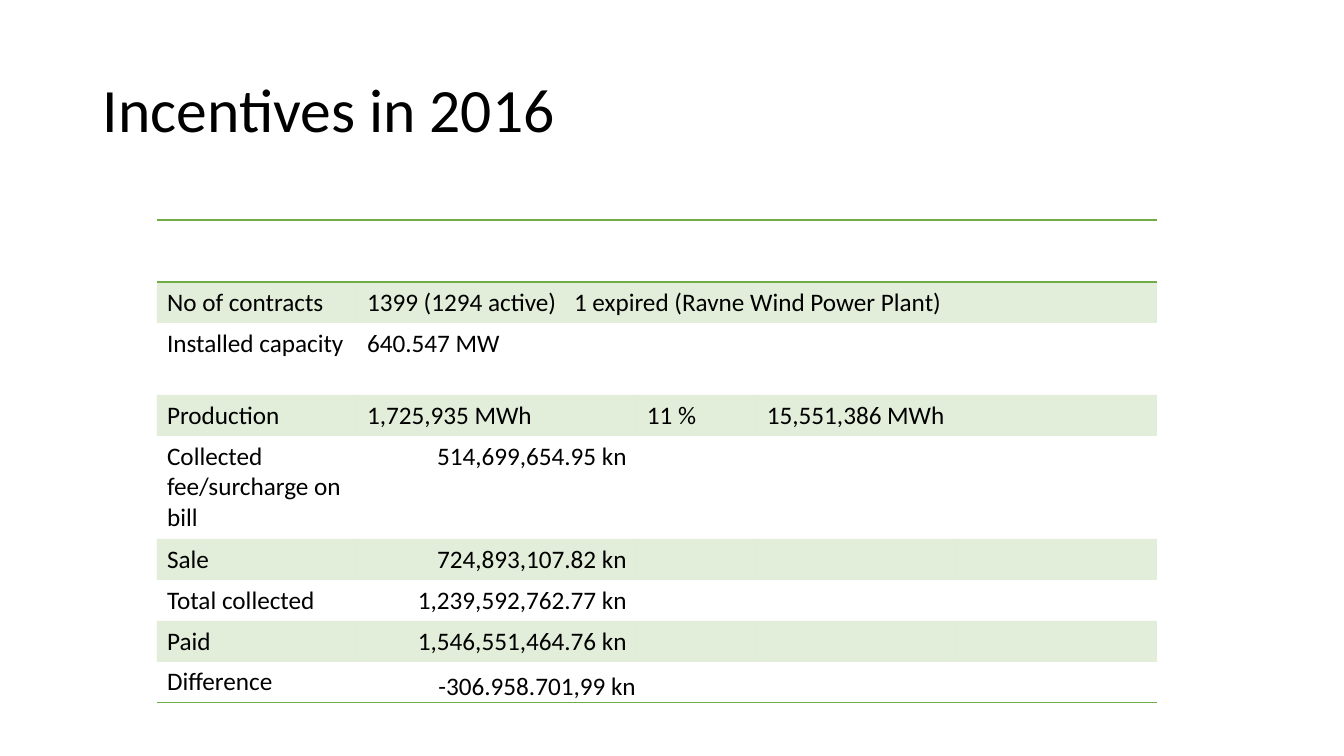
"""Build the slide of 2016 incentive figures as a title and a banded table."""
from lxml.etree import SubElement
from pptx import Presentation
from pptx.dml.color import RGBColor
from pptx.enum.text import MSO_ANCHOR, PP_ALIGN
from pptx.oxml.ns import qn
from pptx.util import Pt

PX = 914400 / 100.8
GREEN = "70AD47"
BLACK = "000000"


def px(length):
    return round(length * PX)


def write(paragraph, text, size):
    run = paragraph.add_run()
    run.text = text
    run.font.name = "Calibri"
    run.font.size = Pt(size)
    run.font.color.rgb = RGBColor.from_string(BLACK)


prs = Presentation()
prs.slide_width, prs.slide_height = px(1344), px(756)
slide = prs.slides.add_slide(prs.slide_layouts[6])

title = slide.shapes.add_textbox(px(93), px(40), px(1159), px(146)).text_frame
title.word_wrap = True
title.vertical_anchor = MSO_ANCHOR.MIDDLE
title.paragraphs[0].line_spacing = 0.9
write(title.paragraphs[0], "Incentives in 2016", 44)

column_widths = [200, 200, 80, 120, 200, 200]
row_heights = [62, 41, 72, 41, 103, 41, 41, 41, 40]
figures = [
    {},
    {0: "No of contracts", 1: "1399 (1294 active)\t1 expired (Ravne Wind Power Plant)"},
    {0: "Installed capacity", 1: "640.547 MW"},
    {0: "Production", 1: "1,725,935 MWh", 3: "11 %", 4: "15,551,386 MWh"},
    {0: "Collected fee/surcharge on bill", 1: "514,699,654.95 kn"},
    {0: "Sale", 1: "724,893,107.82 kn"},
    {0: "Total collected", 1: "1,239,592,762.77 kn"},
    {0: "Paid", 1: "1,546,551,464.76 kn"},
    {0: "Difference", 1: "-306.958.701,99 kn"},
]
last_row = len(figures) - 1
first_money_row = 4
ruled_sides = {0: ["a:lnT", "a:lnB"], last_row: ["a:lnB"]}

incentives = slide.shapes.add_table(
    len(row_heights), len(column_widths),
    px(157), px(220), px(sum(column_widths)), px(sum(row_heights))).table
incentives.first_row = False
incentives.horz_banding = False
style_id = incentives._tbl.tblPr.find(qn("a:tableStyleId"))
style_id.text = "{2D5ABB26-0587-4C30-8999-92F81FD0307C}"
for column, width in zip(incentives.columns, column_widths):
    column.width = px(width)
for row, height in zip(incentives.rows, row_heights):
    row.height = px(height)

for r, row_figures in enumerate(figures):
    for c in range(len(column_widths)):
        cell = incentives.cell(r, c)
        for side in ruled_sides.get(r, []):
            rule = SubElement(cell._tc.get_or_add_tcPr(), qn(side), w=str(Pt(1)))
            rule_fill = SubElement(rule, qn("a:solidFill"))
            SubElement(rule_fill, qn("a:srgbClr"), val=GREEN)
        if r % 2:
            cell.fill.solid()
            cell.fill.fore_color.rgb = RGBColor.from_string(GREEN)
            band = cell._tc.tcPr.find(qn("a:solidFill")).find(qn("a:srgbClr"))
            SubElement(band, qn("a:alpha"), val="20000")
        else:
            cell.fill.background()
        if c in row_figures:
            write(cell.text_frame.paragraphs[0], row_figures[c], 18)
        if c == 1 and r >= first_money_row:
            cell.text_frame.paragraphs[0].alignment = PP_ALIGN.RIGHT

merges = [(0, 2, 3), (1, 1, 5), (2, 1, 5), (3, 1, 2), (3, 4, 5)]
merges += [(r, 1, 2) for r in range(first_money_row, last_row + 1)]
for r, first, last in merges:
    incentives.cell(r, first).merge(incentives.cell(r, last))

contracts = incentives.cell(1, 1).text_frame.paragraphs[0]
tab_stops = SubElement(contracts._p.get_or_add_pPr(), qn("a:tabLst"))
SubElement(tab_stops, qn("a:tab"), pos=str(px(207)), algn="l")

difference = incentives.cell(last_row, 1)
difference.vertical_anchor = MSO_ANCHOR.BOTTOM
difference.margin_left = difference.margin_right = difference.margin_top = px(1)
difference.margin_bottom = 0

prs.save("out.pptx")
